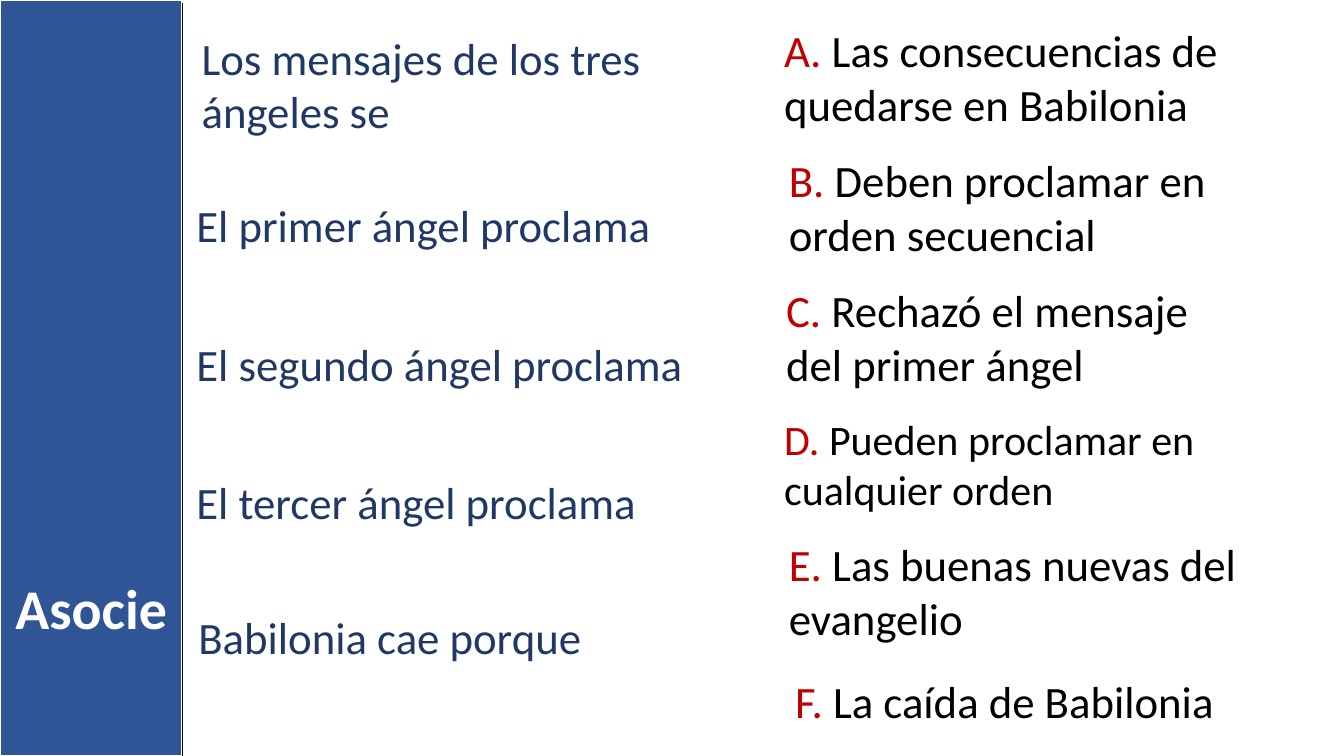
from dataclasses import dataclass

import pptx
import pptx.dml.color
import pptx.enum.shapes
import pptx.enum.text
import pptx.oxml
import pptx.slide
import pptx.text.text
import pptx.util

Cm = pptx.util.Cm
Pt = pptx.util.Pt
RGBColor = pptx.dml.color.RGBColor

BLUE = RGBColor(0x2F, 0x55, 0x97)
NAVY = RGBColor(0x20, 0x38, 0x64)
RED = RGBColor(0xC0, 0x00, 0x00)
BLACK = RGBColor(0x00, 0x00, 0x00)
WHITE = RGBColor(0xFF, 0xFF, 0xFF)

FONT = "Calibri"
WIDE, HIGH = Cm(33.87), Cm(19.05)
BAR = Cm(4.6)


@dataclass
class Item:
    text: str
    left: float
    top: float
    width: float
    height: float = 3.0
    size: int = 32
    mark: str = ""


PROMPTS = [
    Item("Los mensajes de los tres ángeles se", 4.83, 0.64, 13.69),
    Item("El primer ángel proclama", 4.7, 4.85, 13.1, 1.63),
    Item("El segundo ángel proclama", 4.7, 8.36, 12.95, 1.63),
    Item("El tercer ángel proclama", 4.7, 11.84, 12.55, 1.63),
    Item("Babilonia cae porque", 4.75, 15.24, 13.1, 1.63),
]
ANSWERS = [
    Item("Las consecuencias de quedarse en Babilonia", 19.51, 0.46, 12.7, mark="A. "),
    Item("Deben proclamar en orden secuencial", 19.63, 3.73, 11.89, mark="B. "),
    Item("Rechazó el mensaje del primer ángel", 19.56, 7.01, 12.01, mark="C. "),
    Item("Pueden proclamar en cualquier orden", 19.51, 10.29, 12.07, 2.82, 30, "D. "),
    Item("Las buenas nuevas del evangelio", 19.63, 13.41, 12.47, mark="E. "),
    Item("La caída de Babilonia", 19.79, 16.84, 11.73, 1.63, mark="F. "),
]


def set_font(font: pptx.text.text.Font, size: int, color: RGBColor) -> None:
    font.name = FONT
    font.size = Pt(size)
    font.color.rgb = color


def add_item(slide: pptx.slide.Slide, item: Item, color: RGBColor) -> None:
    box = slide.shapes.add_textbox(
        Cm(item.left), Cm(item.top), Cm(item.width), Cm(item.height))
    frame = box.text_frame
    frame.word_wrap = True
    line = frame.paragraphs[0]
    set_font(line.font, item.size, color)
    if item.mark:
        mark = line.add_run()
        mark.text = item.mark
        set_font(mark.font, item.size, RED)
    body = line.add_run()
    body.text = item.text


def add_bar(slide: pptx.slide.Slide) -> None:
    bar = slide.shapes.add_shape(
        pptx.enum.shapes.MSO_SHAPE.RECTANGLE, 0, 0, BAR, HIGH)
    bar.shadow.inherit = False
    bar.fill.solid()
    bar.fill.fore_color.rgb = BLUE
    bar.line.color.rgb = WHITE
    bar.line.width = Pt(1.5)

    # Title stands in front of the bar
    title = slide.shapes.title
    title.left, title.top, title.width, title.height = 0, Cm(14.33), BAR, Cm(1.96)
    frame = title.text_frame
    frame.text = "Asocie"
    frame.word_wrap = True
    frame.auto_size = pptx.enum.text.MSO_AUTO_SIZE.NONE
    line = frame.paragraphs[0]
    line.alignment = pptx.enum.text.PP_ALIGN.CENTER
    set_font(line.font, 40, WHITE)
    line.font.bold = True
    bar.element.addnext(title.element)


def add_edge(slide: pptx.slide.Slide) -> None:
    edge = slide.shapes.add_connector(
        pptx.enum.shapes.MSO_CONNECTOR.STRAIGHT, BAR, Cm(0.08), BAR, HIGH)
    edge.line.color.rgb = BLACK
    edge.line.width = Pt(1)
    edge.element.spPr.append(pptx.oxml.parse_xml(
        '<a:effectLst xmlns:a="http://schemas.openxmlformats.org/drawingml/2006/main"/>'))


def main() -> None:
    deck = pptx.Presentation()
    deck.slide_width, deck.slide_height = WIDE, HIGH
    slide = deck.slides.add_slide(deck.slide_layouts.get_by_name("Title Only"))

    # Side bar with the title
    add_bar(slide)

    # Prompts on the left, answers on the right
    for item in PROMPTS:
        add_item(slide, item, NAVY)
    for item in ANSWERS:
        add_item(slide, item, BLACK)

    # Edge of the bar
    add_edge(slide)
    deck.save("out.pptx")


if __name__ == "__main__":
    main()
